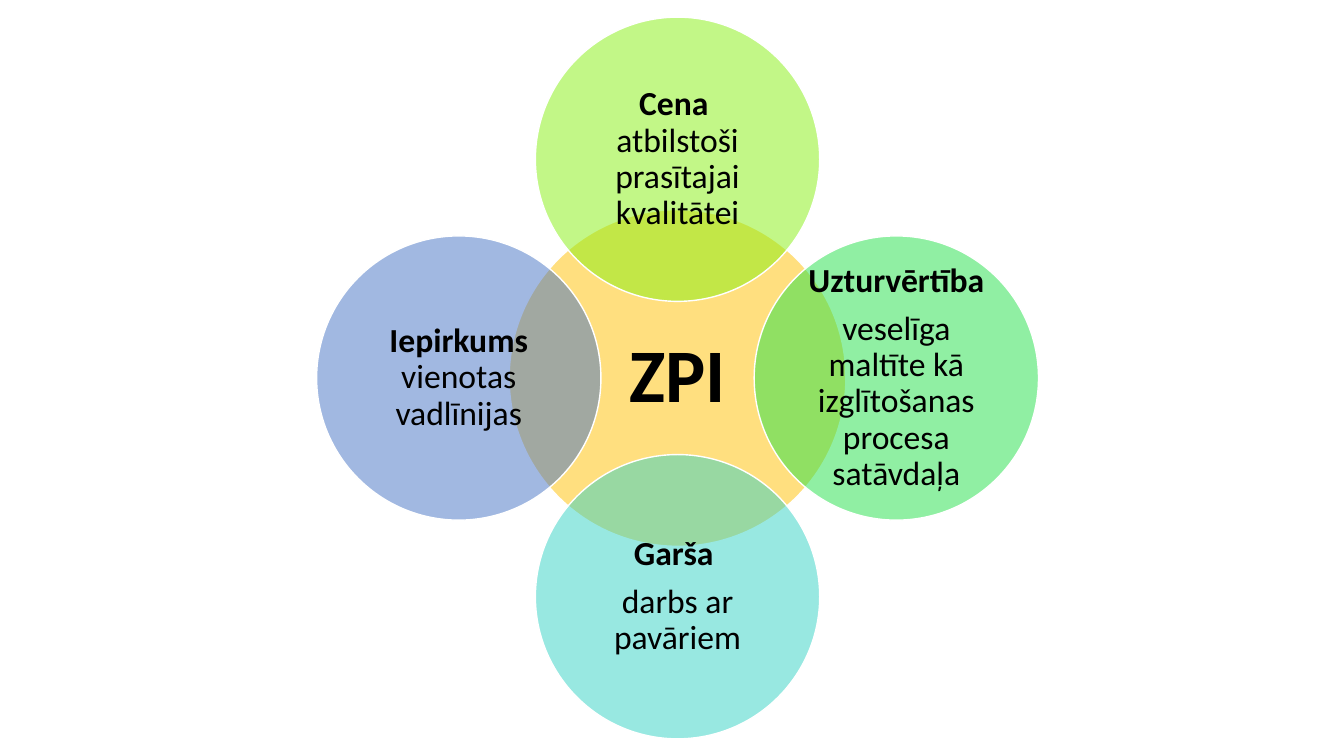
from dataclasses import dataclass

from lxml.etree import SubElement
from pptx import Presentation
from pptx.dml.color import RGBColor
from pptx.enum.shapes import MSO_SHAPE as Shape
from pptx.enum.text import MSO_ANCHOR as Anchor, PP_ALIGN as Align
from pptx.oxml.ns import qn
from pptx.util import Emu, Pt

PX = 9144  # 100 px to the inch
MID_X, MID_Y = 672, 375
STEP = 217


@dataclass
class Circle:
    dx: int
    dy: int
    fill: str
    title: str
    body: str = ""
    split: bool = False  # body stands in its own paragraph
    radius: int = 141
    size: int = 24
    inset: int = 3


CIRCLES = [
    Circle(0, 0, "FFC000", "ZPI", radius=167, size=54, inset=7),
    Circle(0, -1, "86F011", "Cena ", "atbilstoši prasītajai kvalitātei"),
    Circle(1, 0, "23E148", "Uzturvērtība",
           "veselīga maltīte kā izglītošanas procesa satāvdaļa", split=True),
    Circle(0, 1, "33D2C5", "Garša ", "darbs ar pavāriem", split=True),
    Circle(-1, 0, "4472C4", "Iepirkums", "vienotas vadlīnijas"),
]


def px(n: int) -> Emu:
    return Emu(n * PX)


def color(code: str) -> RGBColor:
    return RGBColor.from_string(code)


def style(para, size: int) -> None:
    para.alignment = Align.CENTER
    para.line_spacing = 0.9
    para.space_after = Pt(size * 0.35)
    font = para.font
    font.name, font.size = "Calibri", Pt(size)
    font.color.rgb = color("000000")


def add_run(para, text: str, bold: bool) -> None:
    run = para.add_run()
    run.text = text
    run.font.bold = bold


def write(frame, item: Circle) -> None:
    frame.word_wrap = True
    frame.vertical_anchor = Anchor.MIDDLE
    frame.margin_left = frame.margin_right = px(item.inset)
    frame.margin_top = frame.margin_bottom = px(item.inset)
    para = frame.paragraphs[0]
    style(para, item.size)
    add_run(para, item.title, True)
    if not item.body:
        return
    if item.split:
        para = frame.add_paragraph()
        style(para, item.size)
    else:
        para.add_line_break()
    add_run(para, item.body, False)


def draw(shapes, item: Circle) -> None:
    r = item.radius
    left = MID_X + item.dx * STEP - r
    top = MID_Y + item.dy * STEP - r
    disc = shapes.add_shape(Shape.OVAL, px(left), px(top), px(2 * r), px(2 * r))
    disc.shadow.inherit = False
    disc.fill.solid()
    disc.fill.fore_color.rgb = color(item.fill)
    tint = disc.fill._xPr.find(qn("a:solidFill"))[0]
    SubElement(tint, qn("a:alpha"), val="50000")
    disc.line.color.rgb = color("FFFFFF")
    disc.line.width = Pt(1)
    write(disc.text_frame, item)


def main() -> None:
    deck = Presentation()
    deck.slide_width, deck.slide_height = px(1333), px(750)
    slide = deck.slides.add_slide(deck.slide_layouts[6])
    for item in CIRCLES:
        draw(slide.shapes, item)
    deck.save("out.pptx")


if __name__ == "__main__":
    main()
